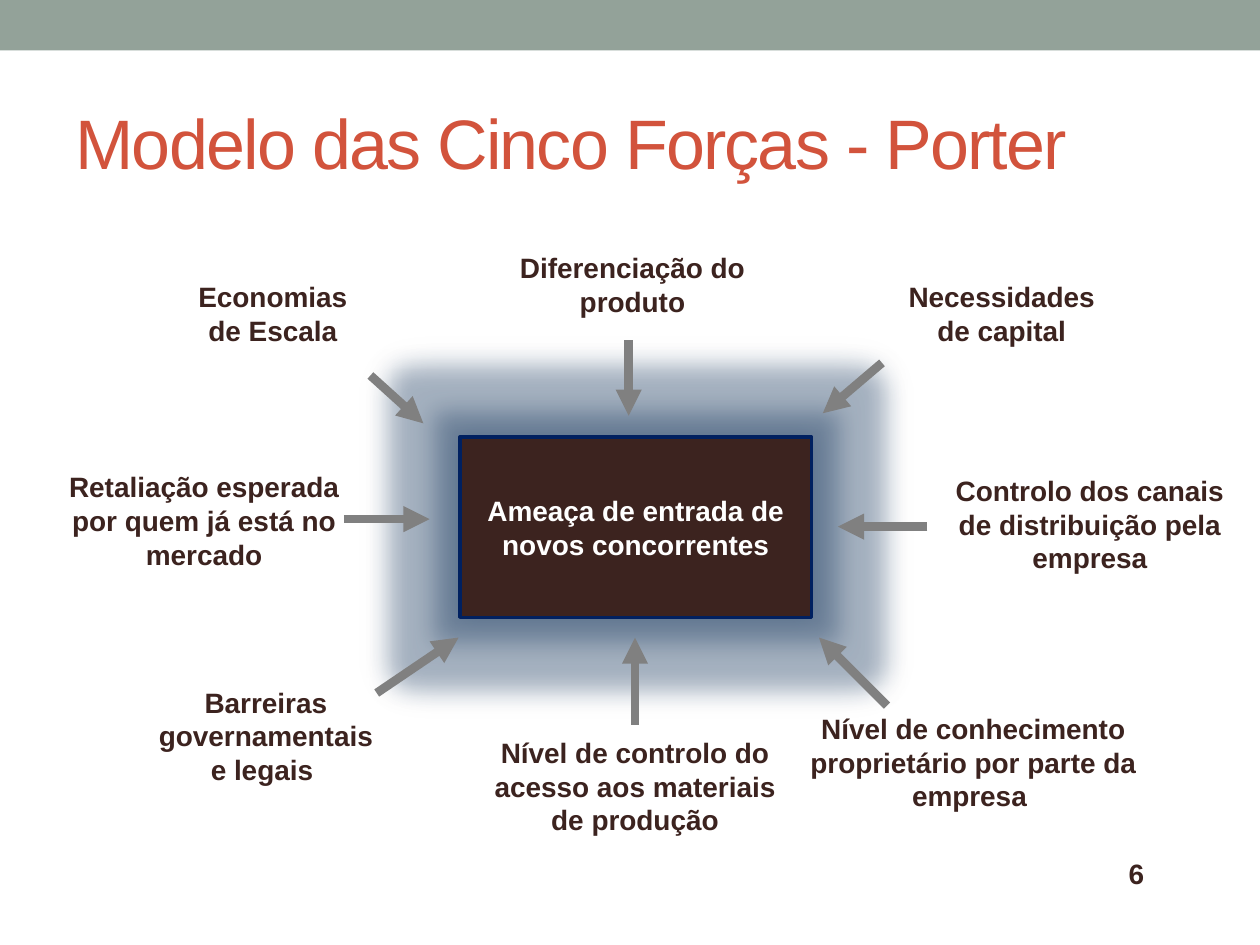
import pptx
import pptx.util
import pptx.dml.color
import pptx.enum.shapes
import pptx.enum.text
import pptx.oxml
import pptx.oxml.ns
from pptx.util import Inches

COLORS = {
    "band": "93A299",
    "title": "D2533C",
    "dark": "3C231F",
    "border": "002060",
    "glow": "16365C",
    "arrow": "808080",
    "white": "FFFFFF",
}
NAMESPACE = pptx.oxml.ns.nsdecls("a")
ALIGN = pptx.enum.text.PP_ALIGN
ANCHOR = pptx.enum.text.MSO_ANCHOR
RECTANGLE = pptx.enum.shapes.MSO_SHAPE.RECTANGLE


def rgb(name):
    return pptx.dml.color.RGBColor.from_string(COLORS[name])


def write_text(shape, text, color, size=16, bold=True, align=ALIGN.CENTER, anchor=ANCHOR.MIDDLE):
    frame = shape.text_frame
    frame.text = text
    frame.word_wrap = True
    frame.vertical_anchor = anchor
    paragraph = frame.paragraphs[0]
    paragraph.alignment = align
    font = paragraph.runs[0].font
    font.name = "Arial"
    font.size = pptx.util.Pt(size)
    font.bold = bold
    font.color.rgb = rgb(color)
    return font


presentation = pptx.Presentation()
presentation.slide_width = Inches(10)
presentation.slide_height = Inches(7.5)
slide = presentation.slides.add_slide(presentation.slide_layouts[6])
shapes = slide.shapes

band = shapes.add_shape(RECTANGLE, 0, 0, Inches(10), Inches(0.4))
band.shadow.inherit = False
band.fill.solid()
band.fill.fore_color.rgb = rgb("band")
band.line.fill.background()

title = shapes.add_textbox(Inches(0.5), Inches(0.58), Inches(9), Inches(1.08))
title_font = write_text(title, "Modelo das Cinco Forças - Porter", "title", 40, False, ALIGN.LEFT)
title_font._element.set("spc", "-100")

number = shapes.add_textbox(Inches(8.86), Inches(6.78), Inches(0.8), Inches(0.3))
write_text(number, "6", "dark", align=ALIGN.LEFT)

threat = shapes.add_shape(RECTANGLE, Inches(3.65), Inches(3.47), Inches(2.79), Inches(1.43))
threat.shadow.inherit = False
threat.fill.solid()
threat.fill.fore_color.rgb = rgb("dark")
threat.line.color.rgb = rgb("border")
threat.line.width = pptx.util.Pt(2)
write_text(threat, "Ameaça de entrada de novos concorrentes", "white")
effects = threat._element.spPr.find(pptx.oxml.ns.qn("a:effectLst"))
for tag, attributes in (
    ("glow", f'rad="{Inches(0.38)}"'),
    ("outerShdw", f'blurRad="{Inches(0.2)}" dist="0" algn="ctr" rotWithShape="0"'),
):
    effects.append(pptx.oxml.parse_xml(
        f'<a:{tag} {NAMESPACE} {attributes}><a:srgbClr val="{COLORS["glow"]}">'
        f'<a:alpha val="33000"/></a:srgbClr></a:{tag}>'
    ))

factors = [
    ("Economias de Escala", 1.34, 2.17, 1.65, 0.64),
    ("Retaliação esperada por quem já está no mercado", 0.4, 3.68, 2.44, 0.91),
    ("Barreiras governamentais e legais ", 1.12, 5.39, 1.98, 0.91),
    ("Nível de controlo do acesso aos materiais de produção", 3.79, 5.79, 2.5, 0.91),
    ("Nível de conhecimento proprietário por parte da empresa ", 6.29, 5.6, 2.87, 0.91),
    ("Controlo dos canais de distribuição pela empresa", 7.41, 3.71, 2.48, 0.91),
    ("Necessidades de capital", 7, 2.17, 1.9, 0.64),
    ("Diferenciação do produto", 3.97, 1.94, 2.1, 0.64),
]
for text, *box in factors:
    factor = shapes.add_textbox(*map(Inches, box))
    write_text(factor, text, "dark", anchor=ANCHOR.TOP)
    factor.text_frame.auto_size = pptx.enum.text.MSO_AUTO_SIZE.SHAPE_TO_FIT_TEXT

arrows = [
    (2.73, 4.12, 3.41, 4.12),
    (4.99, 2.7, 4.99, 3.3),
    (7, 2.88, 6.53, 3.28),
    (5.04, 5.75, 5.04, 5.06),
    (2.99, 5.5, 3.64, 5.06),
    (7.04, 5.6, 6.5, 5.06),
    (7.36, 4.18, 6.65, 4.18),
    (2.94, 2.98, 3.36, 3.36),
]
for ends in arrows:
    arrow = shapes.add_connector(pptx.enum.shapes.MSO_CONNECTOR.STRAIGHT, *map(Inches, ends))
    arrow.line.color.rgb = rgb("arrow")
    arrow.line.width = pptx.util.Pt(5)
    arrow.line._get_or_add_ln().append(pptx.oxml.parse_xml(f'<a:tailEnd {NAMESPACE} type="triangle"/>'))
    arrow._element.spPr.append(pptx.oxml.parse_xml(f"<a:effectLst {NAMESPACE}/>"))

presentation.save("out.pptx")
